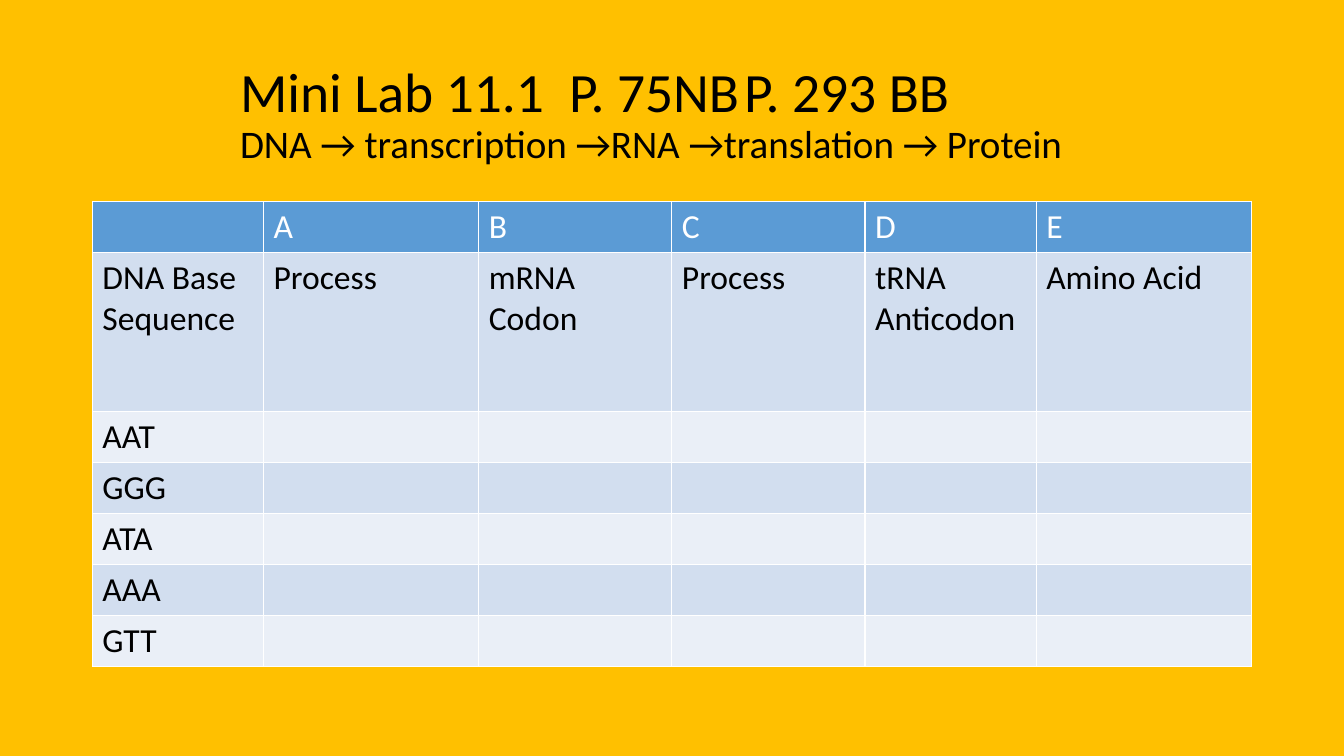
from dataclasses import dataclass

from pptx import Presentation
from pptx import util as u
from pptx.dml.color import RGBColor
from pptx.enum import text

PX = 9525
TITLE_ONLY = 5


@dataclass(frozen=True)
class Theme:
    font: str = "Calibri"
    background: str = "FFC000"
    header: str = "5B9BD5"
    bands: tuple = ("D2DEEF", "EAEFF7")
    dark: str = "000000"
    light: str = "FFFFFF"
    title_size: float = 39.6
    subtitle_size: float = 27.9
    table_size: float = 24


THEME = Theme()

COLUMN_WIDTHS = (163, 205, 184, 184, 163, 205)
ROW_HEIGHT = 46
HEADING_ROW_HEIGHT = 151
ROWS = (
    ("", "A", "B", "C", "D", "E"),
    ("DNA Base Sequence", "Process", "mRNA Codon", "Process", "tRNA Anticodon", "Amino Acid"),
    ("AAT",),
    ("GGG",),
    ("ATA",),
    ("AAA",),
    ("GTT",),
)


def px(length):
    return u.Emu(length * PX)


def set_fill(fill, color):
    fill.solid()
    fill.fore_color.rgb = RGBColor.from_string(color)


def write_text(paragraph, content, *, size, color=THEME.dark, bold=False):
    run = paragraph.add_run()
    run.text = content
    run.font.name = THEME.font
    run.font.size = u.Pt(size)
    run.font.bold = bold
    run.font.color.rgb = RGBColor.from_string(color)


def add_title(slide, left, top, width, height):
    title = slide.shapes.title
    title.left, title.top, title.width, title.height = map(px, (left, top, width, height))
    frame = title.text_frame
    frame.word_wrap = True
    frame.auto_size = text.MSO_AUTO_SIZE.NONE
    frame.vertical_anchor = text.MSO_ANCHOR.MIDDLE
    paragraph = frame.paragraphs[0]
    paragraph.alignment = text.PP_ALIGN.LEFT
    paragraph.line_spacing = 0.9
    write_text(paragraph, "Mini Lab 11.1  P. 75NB\tP. 293 BB", size=THEME.title_size)
    paragraph.add_line_break()
    write_text(
        paragraph,
        "DNA → transcription →RNA →translation → Protein",
        size=THEME.subtitle_size,
    )


def add_codon_table(slide, left, top):
    heights = [ROW_HEIGHT] * len(ROWS)
    heights[1] = HEADING_ROW_HEIGHT
    table = slide.shapes.add_table(
        len(ROWS), len(COLUMN_WIDTHS),
        px(left), px(top), px(sum(COLUMN_WIDTHS)), px(sum(heights)),
    ).table
    for column, width in zip(table.columns, COLUMN_WIDTHS):
        column.width = px(width)
    for index, (row, height, values) in enumerate(zip(table.rows, heights, ROWS)):
        row.height = px(height)
        is_header = index == 0
        fill = THEME.header if is_header else THEME.bands[(index - 1) % 2]
        color = THEME.light if is_header else THEME.dark
        for cell in row.cells:
            set_fill(cell.fill, fill)
        for cell, value in zip(row.cells, values):
            if value:
                write_text(cell.text_frame.paragraphs[0], value, size=THEME.table_size, color=color)


def main():
    presentation = Presentation()
    presentation.slide_width, presentation.slide_height = px(1280), px(720)
    slide = presentation.slides.add_slide(presentation.slide_layouts[TITLE_ONLY])
    set_fill(slide.background.fill, THEME.background)
    add_title(slide, 219, 50, 864, 120)
    add_codon_table(slide, 88, 192)
    presentation.save("out.pptx")


if __name__ == "__main__":
    main()
